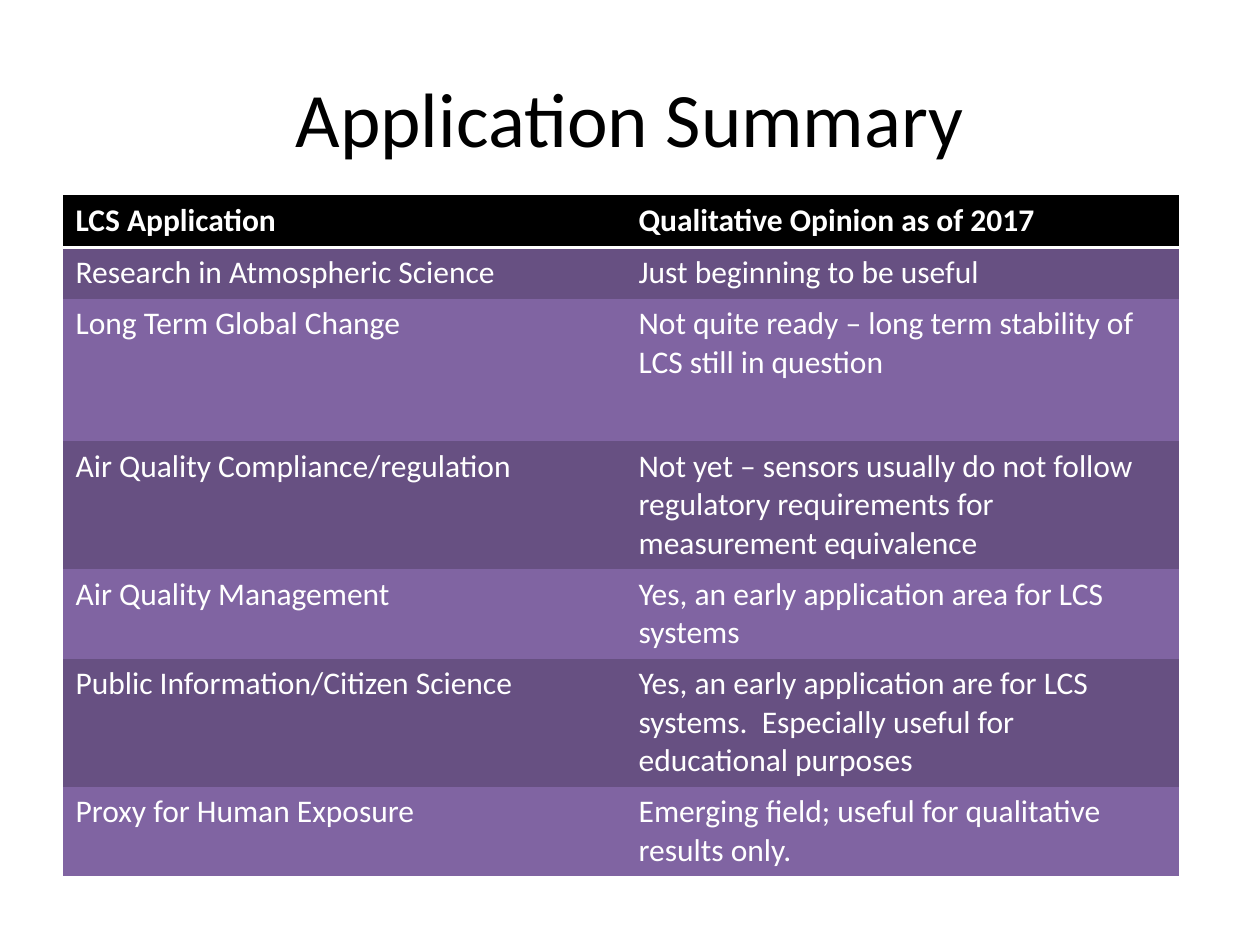
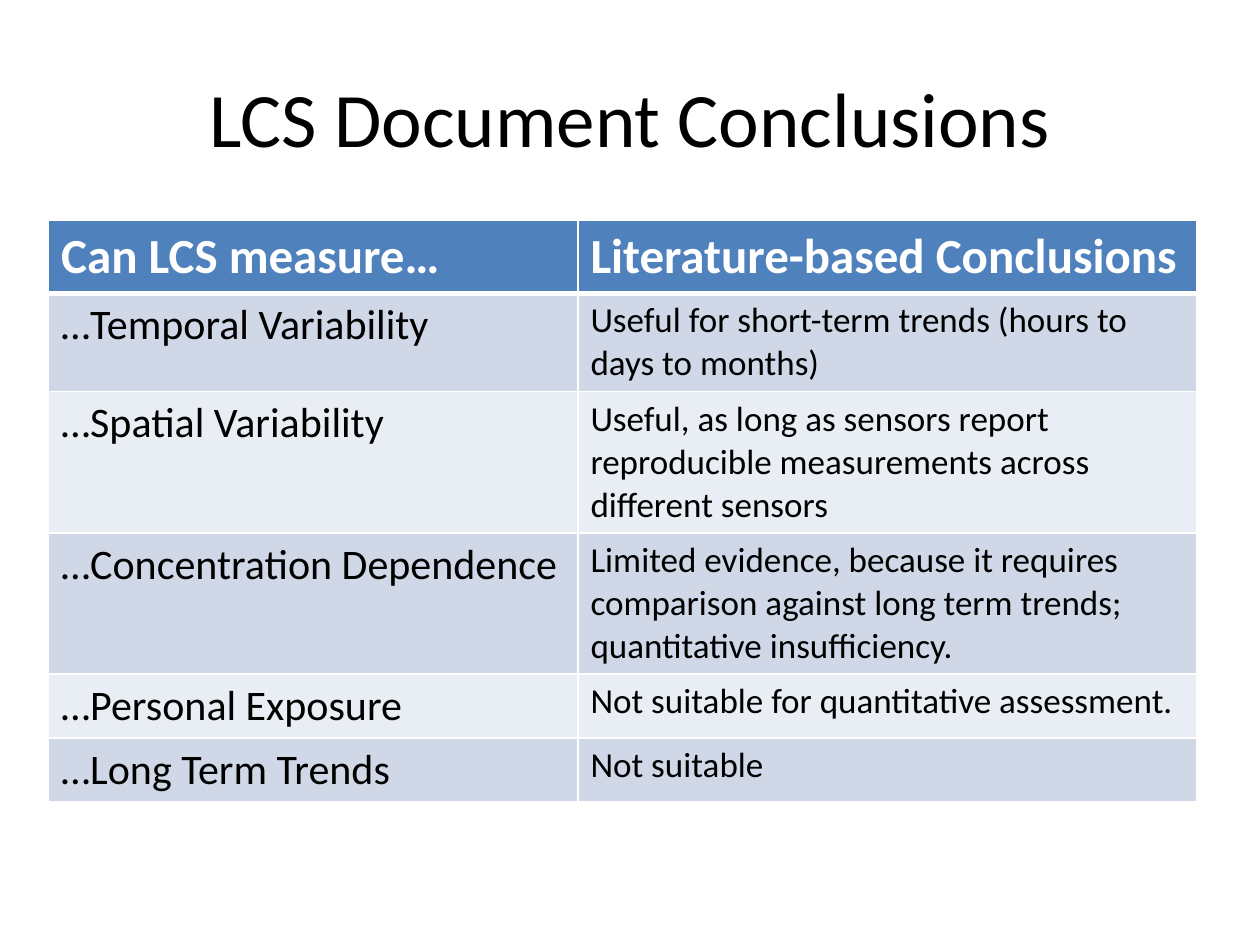
from lxml.etree import SubElement
from pptx import Presentation
from pptx.dml.color import RGBColor
from pptx.enum.text import MSO_ANCHOR, PP_ALIGN
from pptx.oxml.ns import qn
from pptx.util import Cm, Pt

FONT = "Calibri"
BLACK, WHITE = "000000", "FFFFFF"
PLAIN_STYLE = "{2D5ABB26-0587-4C30-8999-92F81FD0307C}"
TITLE_BOX = (1.27, 0.76, 22.86, 3.18)
EDGES = ("L", "R", "T", "B")

SUMMARIES = [
    {
        "title": "Application Summary",
        "corner": (1.27, 3.94),
        "columns": (11.35, 11.15),
        "heights": (1.04, 1.04, 2.87, 2.58, 1.8, 2.58, 1.8),
        "head": {"fill": BLACK, "size": 18, "rule": 2},
        "body": {"fills": ("675082", "8064A2"), "sizes": (18, 18), "text": WHITE, "rule": 0},
        "rows": [
            ("LCS Application", "Qualitative Opinion as of 2017"),
            ("Research in Atmospheric Science", "Just beginning to be useful"),
            ("Long Term Global Change",
             "Not quite ready – long term stability of LCS still in question"),
            ("Air Quality Compliance/regulation",
             "Not yet – sensors usually do not follow regulatory requirements for "
             "measurement equivalence"),
            ("Air Quality Management", "Yes, an early application area for LCS systems"),
            ("Public Information/Citizen Science",
             "Yes, an early application are for LCS systems.  Especially useful for "
             "educational purposes"),
            ("Proxy for Human Exposure",
             "Emerging field; useful for qualitative results only."),
        ],
    },
    {
        "title": "LCS Document Conclusions",
        "corner": (0.98, 4.45),
        "columns": (10.67, 12.48),
        "heights": (1.42, 1.98, 2.84, 2.84, 1.28, 1.28),
        "head": {"fill": "4F81BD", "size": 28, "rule": 3},
        "body": {"fills": ("D0D8E8", "E9EDF4"), "sizes": (24, 20), "text": BLACK, "rule": 1},
        "rows": [
            ("Can LCS measure…", "Literature-based Conclusions"),
            ("…Temporal Variability",
             "Useful for short-term trends (hours to days to months)"),
            ("…Spatial Variability",
             "Useful, as long as sensors report reproducible measurements across "
             "different sensors"),
            ("…Concentration Dependence",
             "Limited evidence, because it requires comparison against long term "
             "trends; quantitative insufficiency."),
            ("…Personal Exposure", "Not suitable for quantitative assessment."),
            ("…Long Term Trends", "Not suitable"),
        ],
    },
]


def rgb(color):
    """Turn a hex string into a colour."""
    return RGBColor.from_string(color)


def style_text(paragraph, size, color, bold=False):
    """Format the font of every run in a paragraph."""
    for run in paragraph.runs:
        font = run.font
        font.name, font.size, font.bold = FONT, Pt(size), bold
        font.color.rgb = rgb(color)


def rule_cell(cell, widths):
    """Draw white borders of the given point widths around a cell."""
    properties = cell._tc.get_or_add_tcPr()
    for position, (edge, width) in enumerate(zip(EDGES, widths)):
        line = SubElement(properties, qn(f"a:ln{edge}"), w=str(Pt(width)))
        properties.insert(position, line)
        if width:
            SubElement(SubElement(line, qn("a:solidFill")), qn("a:srgbClr"), val=WHITE)
        else:
            SubElement(line, qn("a:noFill"))


def add_title(slide, wording):
    """Place and format the slide title."""
    title = slide.shapes.title
    title.left, title.top, title.width, title.height = map(Cm, TITLE_BOX)
    title.text_frame.text = wording
    title.text_frame.vertical_anchor = MSO_ANCHOR.MIDDLE
    heading = title.text_frame.paragraphs[0]
    heading.alignment = PP_ALIGN.CENTER
    style_text(heading, 44, BLACK)


def add_findings(slide, summary):
    """Build the banded two-column table of a slide."""
    head, body = summary["head"], summary["body"]
    columns, heights, rows = summary["columns"], summary["heights"], summary["rows"]
    frame = slide.shapes.add_table(
        len(rows), len(columns), *map(Cm, summary["corner"]),
        Cm(sum(columns)), Cm(sum(heights)))
    findings = frame.table
    findings._tbl.tblPr.find(qn("a:tableStyleId")).text = PLAIN_STYLE
    for column, width in zip(findings.columns, columns):
        column.width = Cm(width)
    for index, (wordings, height) in enumerate(zip(rows, heights)):
        findings.rows[index].height = Cm(height)
        is_head = index == 0
        fill = head["fill"] if is_head else body["fills"][(index - 1) % 2]
        color = WHITE if is_head else body["text"]
        side = body["rule"]
        top = head["rule"] if index == 1 else side
        bottom = head["rule"] if is_head else side
        for number, wording in enumerate(wordings):
            cell = findings.cell(index, number)
            cell.text_frame.text = wording
            size = head["size"] if is_head else body["sizes"][number]
            style_text(cell.text_frame.paragraphs[0], size, color, is_head)
            cell.fill.solid()
            cell.fill.fore_color.rgb = rgb(fill)
            rule_cell(cell, (side, side, top, bottom))


def main():
    """Build the deck and save it."""
    deck = Presentation()
    deck.slide_width, deck.slide_height = Cm(25.4), Cm(19.05)
    title_only = deck.slide_layouts[5]
    for summary in SUMMARIES:
        slide = deck.slides.add_slide(title_only)
        add_title(slide, summary["title"])
        add_findings(slide, summary)
    deck.save("out.pptx")


if __name__ == "__main__":
    main()
